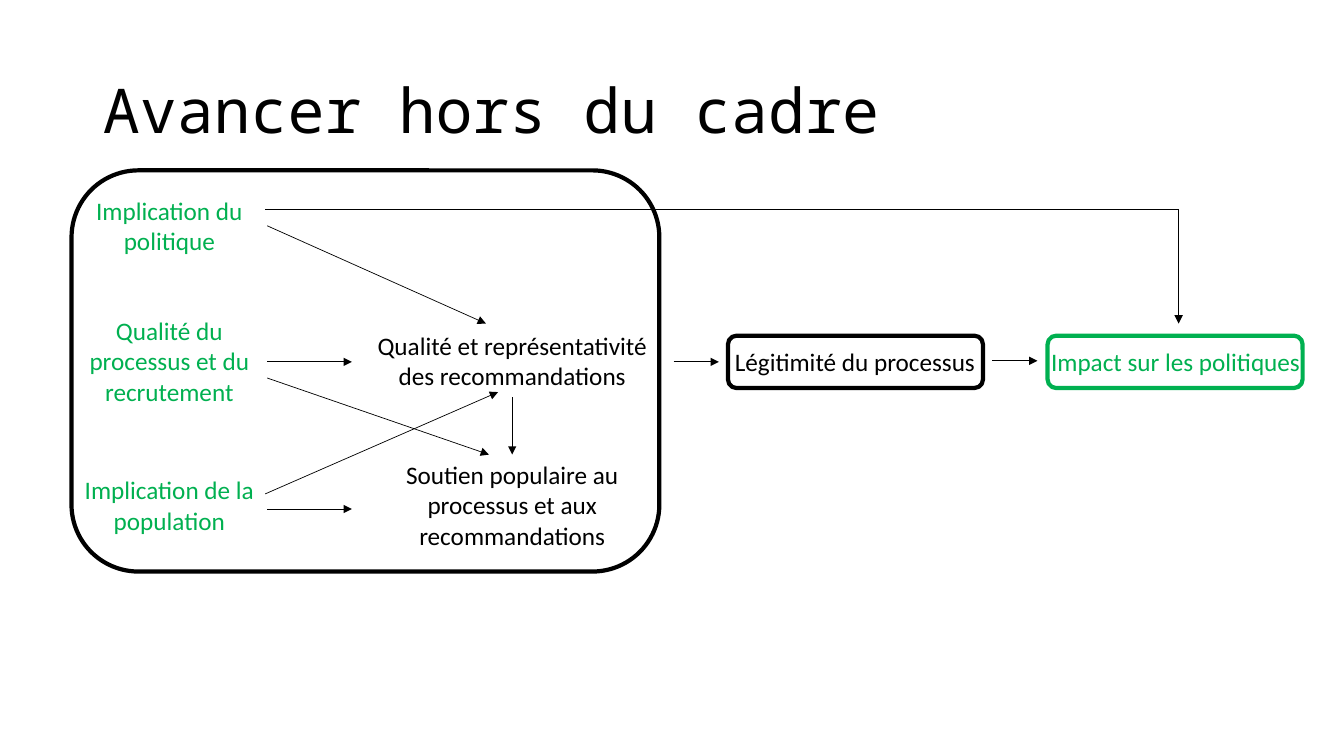
from lxml import etree
from pptx import Presentation
from pptx.dml.color import RGBColor
from pptx.enum.shapes import MSO_CONNECTOR as CONNECTOR, MSO_SHAPE as SHAPE
from pptx.enum.text import MSO_ANCHOR as ANCHOR, PP_ALIGN as ALIGN
from pptx.oxml.ns import qn
from pptx.util import Pt

PX = 9144  # 100 px to the inch
BLACK = RGBColor(0x00, 0x00, 0x00)
GREEN = RGBColor(0x00, 0xB0, 0x50)
WHITE = RGBColor(0xFF, 0xFF, 0xFF)


def px(*lengths):
    return [length * PX for length in lengths]


def style_text(paragraph, font_name, size, color, align):
    paragraph.alignment = align
    for run in paragraph.runs:
        run.font.name = font_name
        run.font.size = Pt(size)
        run.font.color.rgb = color


prs = Presentation()
prs.slide_width, prs.slide_height = px(1333, 750)
slide = prs.slides.add_slide(prs.slide_layouts[5])
slide.background.fill.solid()
slide.background.fill.fore_color.rgb = WHITE

# Title
title = slide.shapes.title
title.left, title.top, title.width, title.height = px(92, 40, 1150, 145)
title.text_frame.text = "Avancer hors du cadre"
title.text_frame.vertical_anchor = ANCHOR.MIDDLE
heading = title.text_frame.paragraphs[0]
heading.line_spacing = 0.9
style_text(heading, "Noto Sans Mono", 44, BLACK, ALIGN.LEFT)

# Frames: the process, its legitimacy and its impact
frames = [
    (71, 169, 583, 398, BLACK),
    (722, 333, 253, 52, BLACK),
    (1039, 333, 253, 52, GREEN),
]
for left, top, width, height, color in frames:
    frame = slide.shapes.add_shape(SHAPE.ROUNDED_RECTANGLE, *px(left, top, width, height))
    frame.shadow.inherit = False
    frame.fill.background()
    frame.line.color.rgb = color
    frame.line.width = Pt(3)

# Factors: causes in the first column, then effects
CAUSE_WIDTH, EFFECT_WIDTH = 194, 318
factors = [
    ("Implication du politique", 71, 189, CAUSE_WIDTH, 71, GREEN),
    ("Qualité du processus et du recrutement", 71, 308, CAUSE_WIDTH, 101, GREEN),
    ("Implication de la population", 71, 466, CAUSE_WIDTH, 71, GREEN),
    ("Qualité et représentativité des recommandations", 349, 323, EFFECT_WIDTH, 71, BLACK),
    ("Soutien populaire au processus et aux recommandations", 349, 451, EFFECT_WIDTH, 101, BLACK),
    ("Légitimité du processus", 689, 339, EFFECT_WIDTH, 40, BLACK),
    ("Impact sur les politiques", 1007, 339, EFFECT_WIDTH, 40, GREEN),
]
for wording, left, top, width, height, color in factors:
    factor = slide.shapes.add_textbox(*px(left, top, width, height))
    factor.text_frame.word_wrap = True
    factor.text_frame.text = wording
    style_text(factor.text_frame.paragraphs[0], "Calibri", 18, color, ALIGN.CENTER)

# Influences between factors: start, end, arrowhead
influences = [
    (265, 224, 482, 321, True),
    (265, 359, 349, 359, True),
    (265, 375, 485, 451, True),
    (263, 490, 494, 389, True),
    (265, 505, 349, 505, True),
    (508, 394, 508, 451, True),
    (668, 359, 713, 359, True),
    (984, 358, 1029, 358, True),
    (263, 208, 1169, 208, False),
    (1169, 208, 1169, 321, True),
]
for start_x, start_y, end_x, end_y, has_head in influences:
    influence = slide.shapes.add_connector(
        CONNECTOR.STRAIGHT, *px(start_x, start_y, end_x, end_y))
    influence.line.color.rgb = BLACK
    influence.line.width = Pt(0.5)
    properties = influence.line._get_or_add_ln().getparent()
    if has_head:
        etree.SubElement(properties.find(qn("a:ln")), qn("a:tailEnd"), type="triangle")
    etree.SubElement(properties, qn("a:effectLst"))

prs.save("out.pptx")
